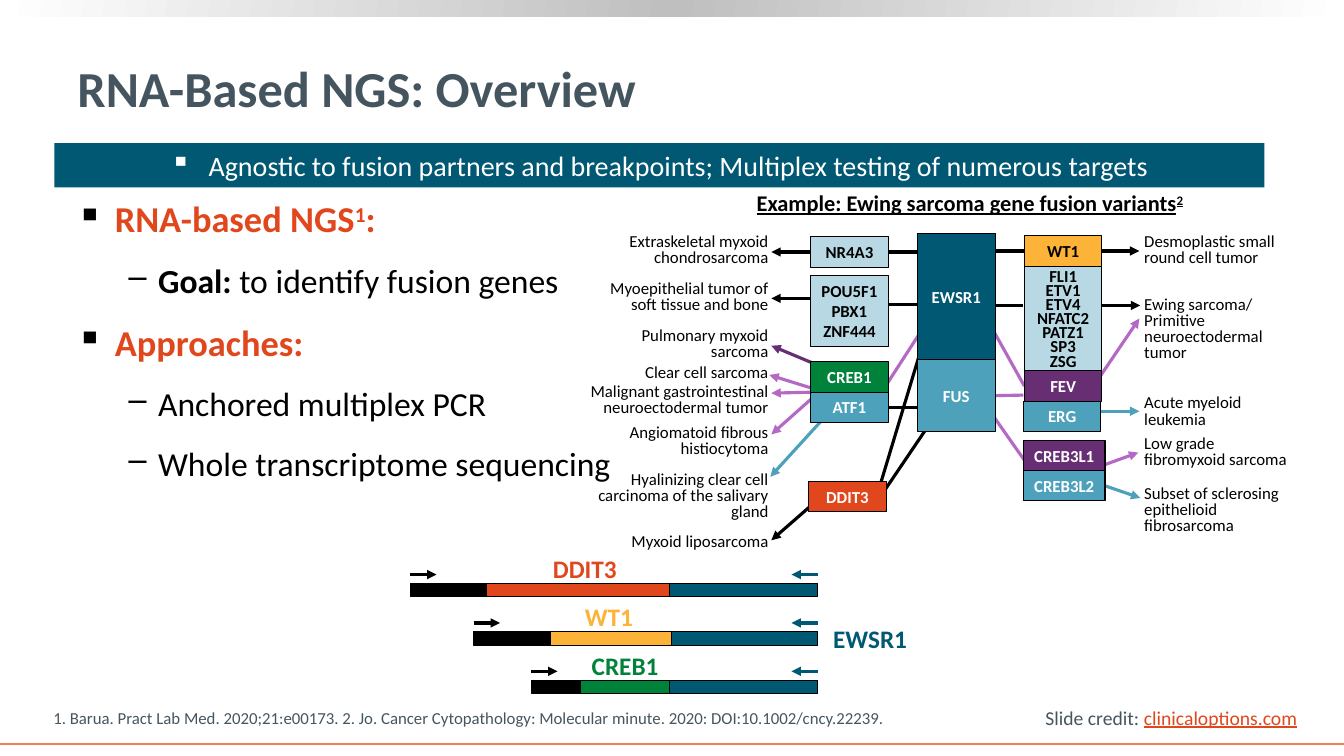
from copy import deepcopy
from lxml import etree
from pptx import Presentation
from pptx.dml.color import RGBColor
from pptx.enum.shapes import MSO_CONNECTOR as Connector, MSO_SHAPE as Shape
from pptx.enum.text import MSO_ANCHOR as Anchor, PP_ALIGN as Align
from pptx.oxml.ns import qn
from pptx.util import Inches, Pt

COLORS = {
    "white": "FFFFFF", "black": "000000", "silver": "BFBFBF", "slate": "455560",
    "teal": "015873", "sky": "4DA1BB", "pale": "B8D9E4", "orange": "E1471D",
    "coral": "F47D55", "gold": "FDB338", "green": "00823B", "plum": "682E74",
    "orchid": "B469C4",
}

# Content
TITLE = "RNA-Based NGS: Overview"
BANNER = "Agnostic to fusion partners and breakpoints; Multiplex testing of numerous targets"
CITATION = ("1. Barua. Pract Lab Med. 2020;21:e00173. 2. Jo. Cancer Cytopathology: "
            "Molecular minute. 2020: DOI:10.1002/cncy.22239.")
CREDIT = ("Slide credit: ", "clinicaloptions.com")
DIAGRAM_TITLE = ("Example: Ewing sarcoma gene fusion variants", "2")
# level, then (text, bold, superscript) spans
OUTLINE = [
    (0, [("RNA-based NGS", True, False), ("1", True, True), (":", True, False)]),
    (1, [("Goal: ", True, False), ("to identify fusion genes", False, False)]),
    (0, [("Approaches:", True, False)]),
    (1, [("Anchored multiplex PCR", False, False)]),
    (1, [("Whole transcriptome sequencing", False, False)]),
]
# level: size, color, left indent, hanging indent, bullet
LEVELS = [(26, "orange", 0.38, 0.38, "▪"), (24, "black", 0.81, 0.31, "‒")]

# name, partner color, left, partner start, shared gene start, label center
TRANSCRIPTS = [
    ("DDIT3", "orange", 4.07, 4.83, 6.64, 5.8),
    ("WT1", "gold", 4.7, 5.46, 6.66, 6.04),
    ("CREB1", "green", 5.27, 5.76, 6.64, 6.2),
]
TRANSCRIPT_TOP, TRANSCRIPT_STEP, TRANSCRIPT_RIGHT = 5.79, 0.48, 8.11

# names, fill, text color, left, top, width, height
GENES = [
    (["POU5F1", "PBX1", "ZNF444"], "pale", "black", 8.04, 2.73, 0.77, 0.71),
    (["WT1"], "gold", "black", 10.16, 2.34, 0.77, 0.3),
    (["FLI1", "ETV1", "ETV4", "NFATC2", "PATZ1", "SP3", "ZSG"],
     "pale", "black", 10.16, 2.64, 0.77, 1.04),
    (["FEV"], "plum", "white", 10.16, 3.68, 0.77, 0.3),
    (["ERG"], "sky", "white", 10.15, 3.98, 0.77, 0.3),
    (["CREB3L1"], "plum", "white", 10.15, 4.37, 0.81, 0.3),
    (["CREB3L2"], "sky", "white", 10.15, 4.67, 0.81, 0.3),
    (["EWSR1"], "teal", "white", 9.1, 2.32, 0.77, 1.25),
    (["FUS"], "sky", "white", 9.1, 3.57, 0.77, 0.71),
    (["NR4A3"], "pale", "black", 8.04, 2.35, 0.77, 0.3),
    (["CREB1"], "green", "white", 8.04, 3.59, 0.77, 0.3),
    (["ATF1"], "sky", "white", 8.04, 3.89, 0.77, 0.3),
    (["DDIT3"], "orange", "white", 8.02, 4.78, 0.77, 0.3),
]
# color, start, end
LINKS = [
    ("black", (9.1, 2.5), (8.81, 2.5)), ("black", (9.1, 3.02), (8.81, 3.02)),
    ("black", (9.1, 4.04), (8.81, 4.04)), ("black", (10.15, 2.49), (9.86, 2.49)),
    ("black", (10.15, 3.03), (9.86, 3.03)), ("orchid", (10.15, 3.92), (9.86, 3.92)),
    ("orchid", (10.17, 3.82), (9.83, 3.24)), ("orchid", (10.17, 4.58), (9.84, 4.11)),
    ("orchid", (9.12, 3.31), (8.79, 3.82)), ("black", (9.11, 3.55), (8.73, 4.81)),
    ("black", (9.19, 4.25), (8.75, 4.9)),
]
ARROWS = [
    ("orchid", (8.08, 3.86), (7.63, 3.72)), ("orchid", (8.1, 3.89), (7.65, 3.9)),
    ("orchid", (8.1, 3.91), (7.65, 4.31)), ("orchid", (10.9, 3.75), (11.3, 3.16)),
    ("orchid", (10.93, 4.62), (11.29, 4.49)), ("sky", (10.96, 4.82), (11.31, 4.94)),
    ("sky", (10.81, 4.08), (11.3, 4.08)), ("sky", (8.16, 4.16), (7.64, 4.73)),
    ("plum", (8.08, 3.61), (7.65, 3.43)), ("black", (8.04, 2.5), (7.65, 2.5)),
    ("black", (8.04, 2.96), (7.65, 2.96)), ("black", (8.04, 5.02), (7.65, 5.36)),
    ("black", (10.93, 2.49), (11.3, 2.49)), ("black", (10.88, 3.03), (11.31, 3.03)),
]
# text, top, height
LEFT_TUMORS = [
    ("Extraskeletal myxoid chondrosarcoma", 2.28, 0.43),
    ("Myoepithelial tumor of soft tissue and bone", 2.74, 0.43),
    ("Pulmonary myxoid sarcoma", 3.21, 0.43),
    ("Clear cell sarcoma", 3.58, 0.27),
    ("Malignant gastrointestinal neuroectodermal tumor", 3.77, 0.43),
    ("Angiomatoid fibrous histiocytoma", 4.17, 0.43),
    ("Hyalinizing clear cell carcinoma of the salivary gland", 4.64, 0.59),
    ("Myxoid liposarcoma", 5.25, 0.27),
]
RIGHT_TUMORS = [
    ("Desmoplastic small round cell tumor", 2.28, 0.43),
    ("Ewing sarcoma/\vPrimitive neuroectodermal tumor", 2.9, 0.75),
    ("Acute myeloid leukemia", 3.88, 0.43),
    ("Low grade fibromyxoid sarcoma", 4.28, 0.43),
    ("Subset of sclerosing epithelioid fibrosarcoma", 4.78, 0.59),
]

deck = Presentation()
deck.slide_width, deck.slide_height = Inches(13.33), Inches(7.5)
page = deck.slides.add_slide(deck.slide_layouts[6])


def rgb(name):
    return RGBColor.from_string(COLORS[name])


def style(span, size, color, bold=False, underline=None, raised=False):
    font = span.font
    font.name, font.size, font.bold, font.underline = "Calibri", Pt(size), bold, underline
    font.color.rgb = rgb(color)
    if raised:
        span._r.get_or_add_rPr().set("baseline", "30000")


def write(box, lines, size, color, bold=False, align=Align.LEFT, spacing=None,
          anchor=Anchor.TOP, wrap=True):
    frame = box.text_frame
    frame.text = "\n".join(lines)
    frame.word_wrap, frame.vertical_anchor = wrap, anchor
    for para in frame.paragraphs:
        para.alignment, para.line_spacing = align, spacing
        for span in para.runs:
            style(span, size, color, bold)
    return box


def text_box(*place):
    return page.shapes.add_textbox(*map(Inches, place))


def rectangle(fill, *place, outlined=False):
    box = page.shapes.add_shape(Shape.RECTANGLE, *map(Inches, place))
    box.shadow.inherit = False
    box.fill.solid()
    box.fill.fore_color.rgb = rgb(fill)
    if outlined:
        box.line.color.rgb, box.line.width = rgb("black"), Pt(0)
    else:
        box.line.fill.background()
    return box


def line(color, start, end, arrow=False, width=2.25):
    link = page.shapes.add_connector(Connector.STRAIGHT, *map(Inches, start + end))
    link.line.color.rgb, link.line.width = rgb(color), Pt(width)
    if arrow:
        etree.SubElement(link.line._get_or_add_ln(), qn("a:tailEnd"), type="triangle")
    etree.SubElement(link._element.spPr, qn("a:effectLst"))
    return link


def bullet(para, mark, color, left, hanging):
    props = para._p.get_or_add_pPr()
    props.set("marL", str(Inches(left)))
    props.set("indent", str(-Inches(hanging)))
    tint = etree.SubElement(props, qn("a:buClr"))
    etree.SubElement(tint, qn("a:srgbClr"), val=COLORS[color])
    etree.SubElement(props, qn("a:buChar"), char=mark)


# Top gradient bar and bottom rule
bar = rectangle("white", 0, 0, 13.33, 0.16)
bar.fill.gradient()
bar.fill.gradient_angle = 170
stops = bar._element.spPr.find(qn("a:gradFill")).find(qn("a:gsLst"))
stops.append(deepcopy(stops[0]))
for stop, position, shade in zip(bar.fill.gradient_stops, (0, 0.5, 1), ("white", "silver", "white")):
    stop.position, stop.color.rgb = position, rgb(shade)
line("coral", (0, 7.38), (13.33, 7.38), width=1.5)

# Title, banner and footer
write(text_box(0.67, 0.26, 12.18, 1.21), [TITLE], 36, "slate", True, anchor=Anchor.MIDDLE)
banner = write(rectangle("teal", 0.54, 1.42, 12, 0.44), [BANNER], 20, "white",
               align=Align.CENTER, anchor=Anchor.MIDDLE)
bullet(banner.text_frame.paragraphs[0], "▪", "white", 0.38, 0.38)
write(text_box(0.43, 6.99, 9.82, 0.28), [CITATION], 12, "slate", spacing=0.9, anchor=Anchor.BOTTOM)
credit = write(text_box(10.27, 6.95, 2.72, 0.34), [CREDIT[0]], 14, "slate", wrap=False)
site = credit.text_frame.paragraphs[0].add_run()
site.text = CREDIT[1]
style(site, 14, "orange", underline=True)

# Outline
outline = text_box(0.66, 1.95, 5.81, 3.49).text_frame
outline.word_wrap = True
for index, (level, spans) in enumerate(OUTLINE):
    size, color, left, hanging, mark = LEVELS[level]
    para = outline.add_paragraph() if index else outline.paragraphs[0]
    para.level = level
    bullet(para, mark, "black", left, hanging)
    para.line_spacing, para.space_after = 0.9, Pt(7)
    if index:
        para.space_before = Pt(10)
    for words, bold, raised in spans:
        span = para.add_run()
        span.text = words
        style(span, size, color, bold, raised=raised)

# Diagram heading
heading = write(text_box(6.87, 1.83, 5.5, 0.37), [DIAGRAM_TITLE[0]], 16, "black", True, Align.CENTER)
note = heading.text_frame.paragraphs[0].add_run()
note.text = DIAGRAM_TITLE[1]
for span in heading.text_frame.paragraphs[0].runs:
    style(span, 16, "black", True, True, span.text == note.text)

# Fusion transcripts with primer arrows
for row, (name, color, left, partner, shared, center) in enumerate(TRANSCRIPTS):
    top = TRANSCRIPT_TOP + row * TRANSCRIPT_STEP
    edges = [left, partner, shared, TRANSCRIPT_RIGHT]
    for fill, start, end in zip(("black", color, "teal"), edges, edges[1:]):
        rectangle(fill, start, top, end - start, 0.13, outlined=True)
    for tint, start, step in (("black", left, 0.26), ("teal", TRANSCRIPT_RIGHT, -0.26)):
        line(tint, (start, top - 0.09), (start + step, top - 0.09), True)
    write(text_box(center - 0.45, top - 0.35, 0.9, 0.4), [name], 18, color, True, Align.CENTER, wrap=False)
write(text_box(8.16, 6.13, 0.94, 0.4), ["EWSR1"], 18, "teal", True, Align.CENTER, wrap=False)

# Links lie behind the gene boxes
links = [(line(*link, arrow), *link[1:]) for group, arrow in ((LINKS, False), (ARROWS, True))
         for link in group]
for names, fill, color, left, top, width, height in GENES:
    box = rectangle(fill, left, top, width, height, outlined=True)
    box.text_frame.margin_left = box.text_frame.margin_right = 0
    many = len(names) > 3
    write(box, names, 12, color, True, Align.CENTER, 0.7 if many else None,
          Anchor.TOP if many else Anchor.MIDDLE)
    for side, x in ((1, left), (3, left + width)):
        for link, start, end in links:
            for point, join in ((start, link.begin_connect), (end, link.end_connect)):
                if max(abs(point[0] - x), abs(point[1] - top - height / 2)) < 0.018:
                    join(box, side)

# Tumor names
for tumors, left, width, align in ((LEFT_TUMORS, 5.74, 1.98, Align.RIGHT),
                                   (RIGHT_TUMORS, 11.25, 1.72, Align.LEFT)):
    for name, top, height in tumors:
        write(text_box(left, top, width, height), [name], 12, "black", align=align, spacing=0.8)

deck.save("out.pptx")
